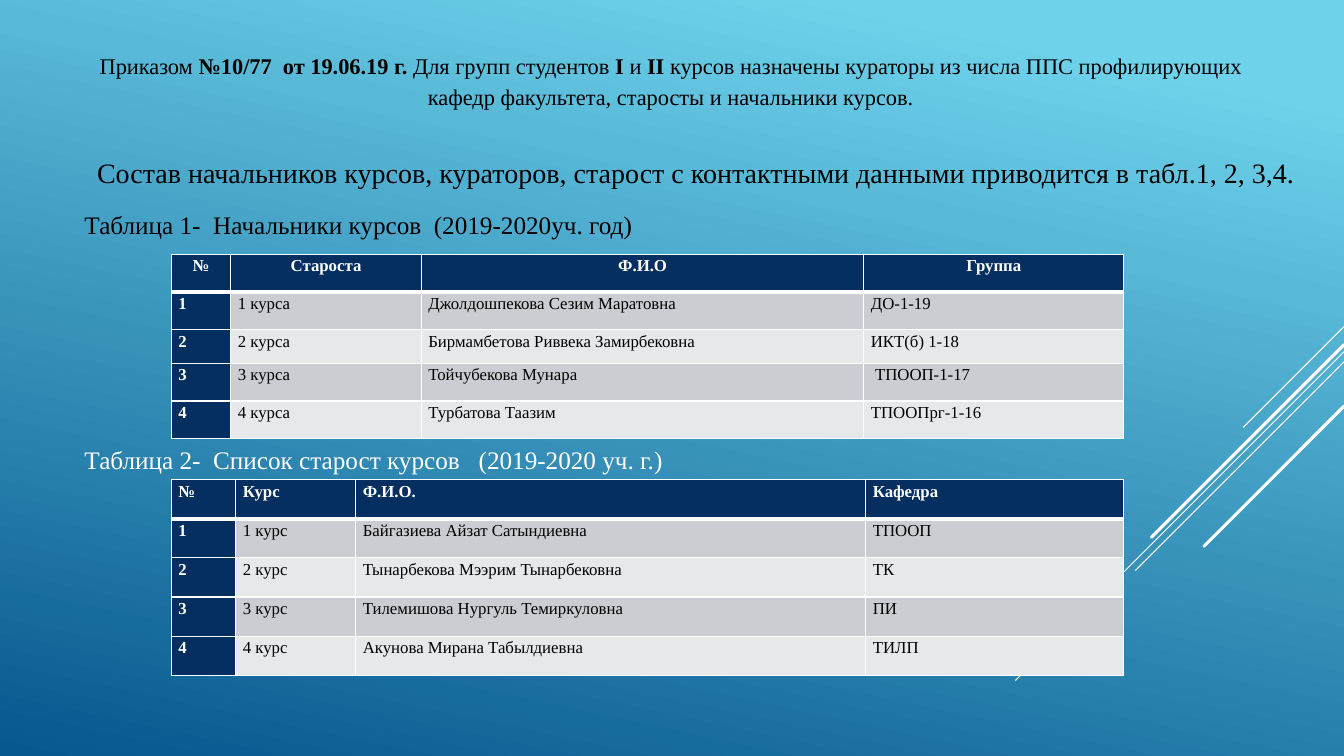
import pptx
import pptx.dml.color
import pptx.enum.shapes
import pptx.enum.text
import pptx.oxml
import pptx.oxml.ns
import pptx.util
from lxml import etree

Pt = pptx.util.Pt
qn = pptx.oxml.ns.qn
ALIGN = pptx.enum.text.PP_ALIGN
ANCHOR = pptx.enum.text.MSO_ANCHOR

COLORS = {
    "white": "FFFFFF", "black": "000000", "navy": "052F61",
    "band_dark": "CCCDD2", "band_light": "E7E8EA",
    "sky": "6ED2EB", "deep": "06588E",
}


def rgb(name):
    return pptx.dml.color.RGBColor.from_string(COLORS[name])


class SlideBuilder:
    font = "Times New Roman"
    spacing = 1.15

    def __init__(self, prs):
        self.s = prs.slides.add_slide(prs.slide_layouts[6])

    def background(self, start, end, angle):
        fill = self.s.background.fill
        fill.gradient()
        fill.gradient_angle = 360 - angle
        for stop, color, position in zip(fill.gradient_stops, (start, end), (0.1, 1)):
            stop.color.rgb = rgb(color)
            stop.position = position

    def diagonal(self, y, run, width):
        """Line from the right edge down to the left at 45 degrees."""
        line = self.s.shapes.add_connector(
            pptx.enum.shapes.MSO_CONNECTOR.STRAIGHT,
            Pt(960), Pt(y), Pt(960 - run), Pt(y + run))
        line.line.color.rgb = rgb("white")
        line.line.width = Pt(width)
        sp_pr = line._element.spPr
        if width > 1:
            sp_pr.find(qn("a:ln")).set("cap", "rnd")
        etree.SubElement(sp_pr, qn("a:effectLst"))

    def style(self, p, size, color, align=ALIGN.LEFT, spacing=None):
        p.alignment = align
        p.line_spacing = spacing or self.spacing
        p.font.name = self.font
        p.font.size = Pt(size)
        p.font.color.rgb = rgb(color)

    def text_box(self, x, y, w, h):
        tf = self.s.shapes.add_textbox(Pt(x), Pt(y), Pt(w), Pt(h)).text_frame
        tf.word_wrap = True
        tf.vertical_anchor = ANCHOR.MIDDLE
        return tf

    def border(self, cell, side, width):
        ln = etree.SubElement(cell._tc.get_or_add_tcPr(), qn("a:ln" + side),
                              w=str(Pt(width)))
        fill = etree.SubElement(ln, qn("a:solidFill"))
        etree.SubElement(fill, qn("a:srgbClr"), val=COLORS["white"])

    def table(self, x, y, widths, heights, rows, head_align):
        table = self.s.shapes.add_table(
            len(rows), len(widths), Pt(x), Pt(y),
            Pt(sum(widths)), Pt(sum(heights))).table
        for column, width in zip(table.columns, widths):
            column.width = Pt(width)
        for i, (values, height) in enumerate(zip(rows, heights)):
            table.rows[i].height = Pt(height)
            for j, value in enumerate(values):
                self.cell(table.cell(i, j), value, i, j, head_align)

    def cell(self, cell, value, i, j, head_align):
        heading = i == 0 or j == 0
        cell.margin_left = cell.margin_right = Pt(5)
        cell.margin_top = cell.margin_bottom = 0
        cell.text = value
        p = cell.text_frame.paragraphs[0]
        self.style(p, 12, "white" if heading else "black",
                   head_align if i == 0 else ALIGN.LEFT)
        p.font.bold = heading
        # Borders come before the fill in the cell properties
        for side in "LRTB":
            under_header = (i, side) in ((0, "B"), (1, "T"))
            self.border(cell, side, 3 if under_header else 1)
        cell.fill.solid()
        band = "band_dark" if i % 2 else "band_light"
        cell.fill.fore_color.rgb = rgb("navy" if heading else band)


def main():
    prs = pptx.Presentation()
    prs.slide_width, prs.slide_height = Pt(960), Pt(540)
    b = SlideBuilder(prs)

    # Background with diagonal lines
    b.background("sky", "deep", 102)
    for y, run, width in ((233.3, 72, 0.75), (251.3, 234.7, 0.75), (258.5, 149, 0.75),
                          (246.2, 137.5, 2.25), (290.2, 100, 2.25)):
        b.diagonal(y, run, width)

    # Title
    p = b.text_box(53.3, 18, 851.8, 77).paragraphs[0]
    b.style(p, 16, "black", ALIGN.CENTER)
    for text, bold in (
            ("Приказом ", False),
            ("№10/77  от 19.06.19 г. ", True),
            ("Для групп студентов ", False),
            ("I ", True),
            ("и ", False),
            ("II ", True),
            ("курсов назначены кураторы из числа ППС профилирующих "
             "кафедр факультета, старосты и начальники курсов.", False)):
        r = p.add_run()
        r.text = text
        r.font.bold = bold

    # Introduction and caption of the first table
    tf = b.text_box(53.3, 93, 887.8, 93)
    p = tf.paragraphs[0]
    p.text = ("Состав начальников курсов, кураторов, старост с контактными "
              "данными приводится в табл.1, 2, 3,4.")
    b.style(p, 20, "black", ALIGN.CENTER)
    p.space_after = Pt(6)
    p = tf.add_paragraph()
    p.text = "Таблица 1-  Начальники курсов  (2019-2020уч. год)"
    b.style(p, 18, "black", ALIGN.JUSTIFY)
    p.space_before = Pt(5)

    # Second table
    b.table(122.4, 342.5, (46.1, 85.7, 364.3, 184.3), [28] * 5, (
        ("№", "Курс", "Ф.И.О.", "Кафедра"),
        ("1", "1 курс", "Байгазиева Айзат Сатындиевна", "ТПООП"),
        ("2", "2 курс", "Тынарбекова Мээрим Тынарбековна", "ТК"),
        ("3", "3 курс", "Тилемишова Нургуль Темиркуловна", "ПИ"),
        ("4", "4 курс", "Акунова Мирана Табылдиевна", "ТИЛП"),
    ), ALIGN.LEFT)

    # Caption of the second table
    p = b.text_box(53.3, 314, 638.6, 29).paragraphs[0]
    p.text = "Таблица 2-  Список старост курсов   (2019-2020 уч. г.)"
    b.style(p, 18, "white", spacing=1.0)

    # First table
    b.table(122.4, 181.5, (42.5, 136.1, 316.1, 185.7), (27, 27, 24, 27, 27), (
        ("№", "Староста", "Ф.И.О", "Группа"),
        ("1", "1 курса", "Джолдошпекова Сезим Маратовна", "ДО-1-19"),
        ("2", "2 курса", "Бирмамбетова Риввека Замирбековна", "ИКТ(б) 1-18"),
        ("3", "3 курса", "Тойчубекова Мунара", " ТПООП-1-17"),
        ("4", "4 курса", "Турбатова Таазим", "ТПООПрг-1-16"),
    ), ALIGN.CENTER)

    prs.save("out.pptx")


if __name__ == "__main__":
    main()
